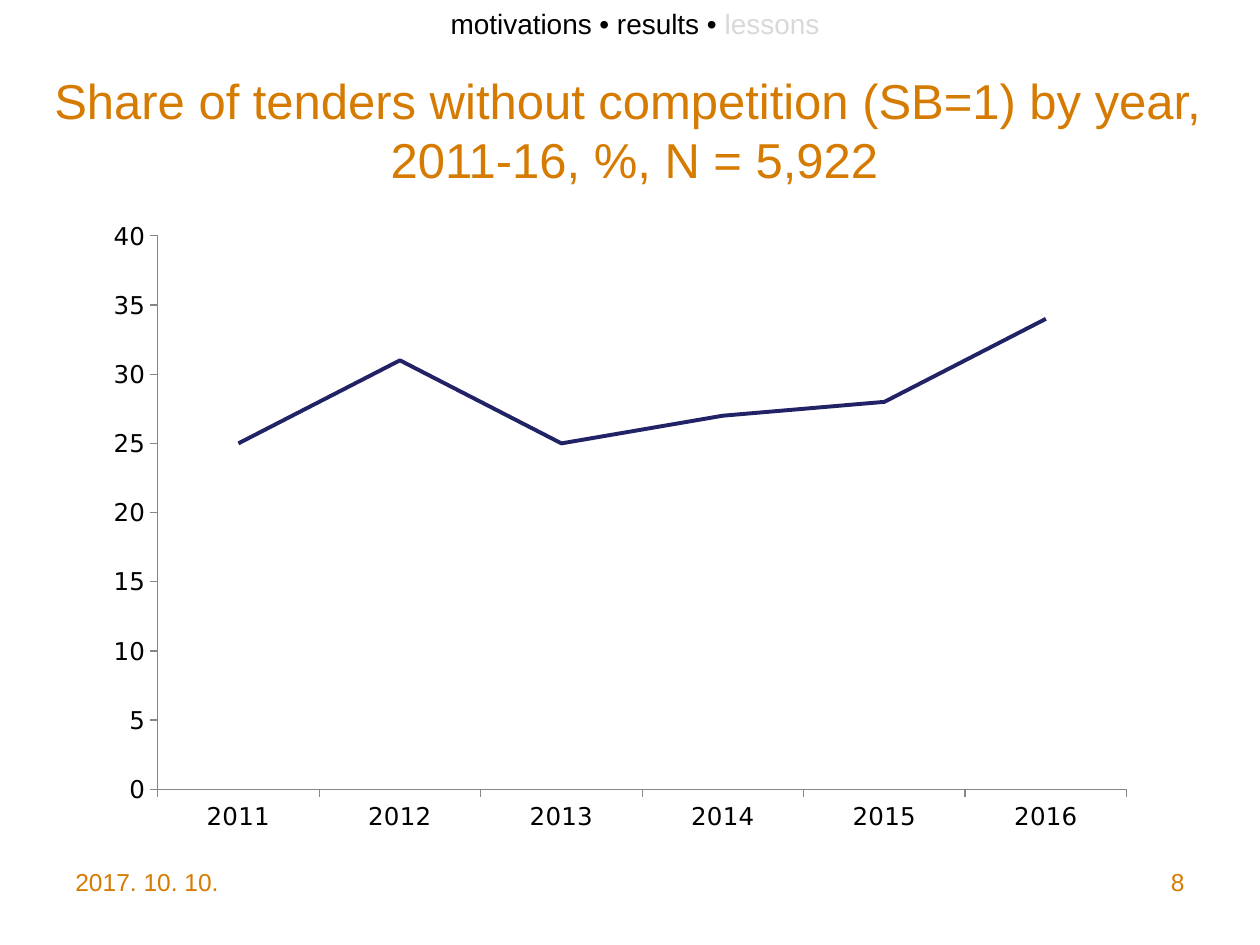
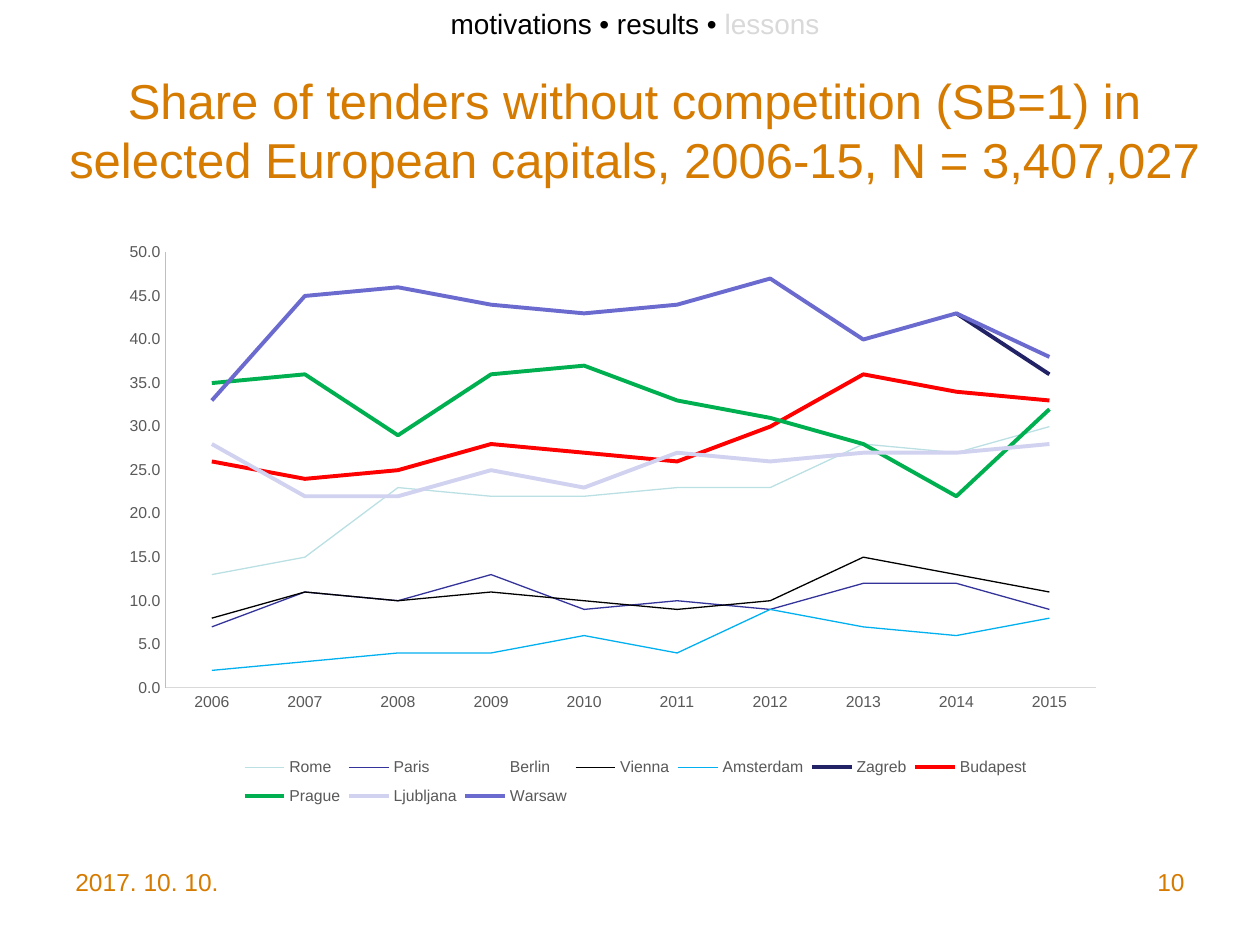
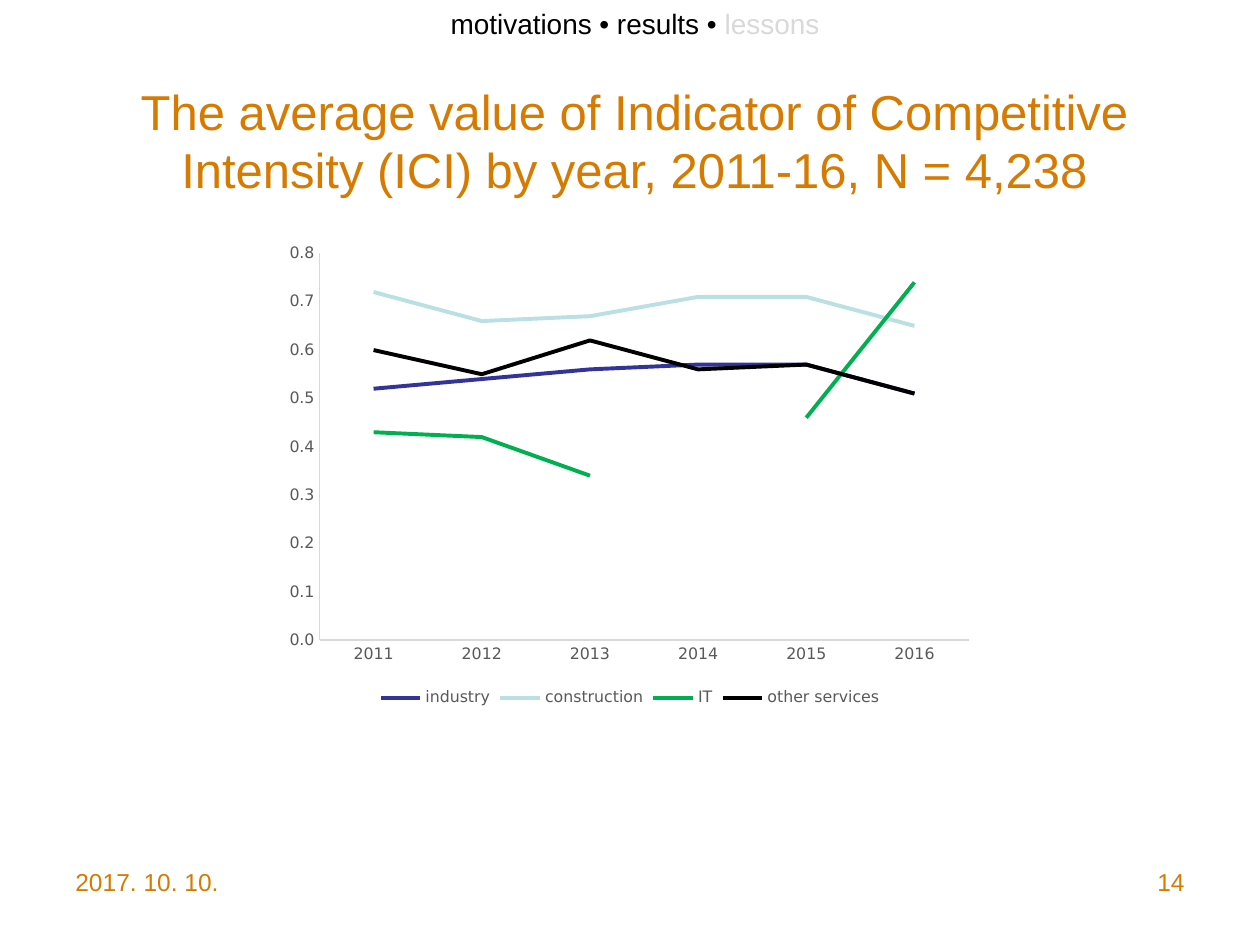
from lxml import etree
from pptx import Presentation
from pptx.chart.data import CategoryChartData
from pptx.dml.color import RGBColor
from pptx.enum.chart import XL_CHART_TYPE, XL_LEGEND_POSITION, XL_TICK_MARK
from pptx.enum.text import MSO_ANCHOR, PP_ALIGN
from pptx.oxml.ns import qn
from pptx.util import Inches, Pt

LEFT, MID, RIGHT = PP_ALIGN.LEFT, PP_ALIGN.CENTER, PP_ALIGN.RIGHT
TOP, CENTER = MSO_ANCHOR.TOP, MSO_ANCHOR.MIDDLE
OUT, NONE = XL_TICK_MARK.OUTSIDE, XL_TICK_MARK.NONE
LINE, BOTTOM = XL_CHART_TYPE.LINE, XL_LEGEND_POSITION.BOTTOM

ORANGE, BLACK, PALE, GRAY = "D67B01", "000000", "D9D9D9", "595959"
NAVY, BLUE, AQUA, GREEN = "222267", "333399", "BBE0E3", "00B050"
SANS, DEJA = "Arial", "DejaVu Sans"
THIN, THICK = 0.75, 2.25
DATE = "2017. 10. 10."
TRAIL = [("motivations • results • ", BLACK), ("lessons", PALE)]

SLIDES = [
    dict(
        title="Share of tenders without competition (SB=1) by year, \v2011-16, %, N = 5,922",
        deep=1.02, page="8",
        chart=dict(
            box=(0.75, 1.67, 8.36, 5.05), plot=(0.06, 0.04, 0.92, 0.87),
            font=DEJA, size=14, color=BLACK, tick=OUT, edges=("868686", "868686"),
            form="###0", top=40, step=5, years=range(2011, 2017),
            rows=[("Series 1", NAVY, THICK, (25, 31, 25, 27, 28, 34))])),
    dict(
        title="Share of tenders without competition (SB=1) in selected European capitals, "
              "2006-15, N = 3,407,027",
        deep=1.02, page="10",
        chart=dict(
            box=(0.83, 1.86, 8.03, 4.8), plot=(0.06, 0.03, 0.92, 0.72),
            font=SANS, size=9, color=GRAY, tick=NONE, edges=(PALE, "BFBFBF"),
            form="0.0", top=50, step=5, legend=True, keys=(0.13, 0.85, 0.79, 0.11),
            years=range(2006, 2016),
            rows=[
                ("Rome", AQUA, THIN, (13, 15, 23, 22, 22, 23, 23, 28, 27, 30)),
                ("Paris", BLUE, THIN, (7, 11, 10, 13, 9, 10, 9, 12, 12, 9)),
                ("Berlin", "FFFFFF", THIN, (None,) * 10),
                ("Vienna", BLACK, THIN, (8, 11, 10, 11, 10, 9, 10, 15, 13, 11)),
                ("Amsterdam", "00B0F0", THIN, (2, 3, 4, 4, 6, 4, 9, 7, 6, 8)),
                ("Zagreb", NAVY, THICK, (None,) * 8 + (43, 36)),
                ("Budapest", "FF0000", THICK, (26, 24, 25, 28, 27, 26, 30, 36, 34, 33)),
                ("Prague", GREEN, THICK, (35, 36, 29, 36, 37, 33, 31, 28, 22, 32)),
                ("Ljubljana", "D1D1F0", THICK, (28, 22, 22, 25, 23, 27, 26, 27, 27, 28)),
                ("Warsaw", "6B6BCF", THICK, (33, 45, 46, 44, 43, 44, 47, 40, 43, 38)),
            ])),
    dict(
        title="The average value of Indicator of Competitive Intensity (ICI) by year, "
              "2011-16, N = 4,238",
        deep=1.18, page="14",
        chart=dict(
            box=(2.2, 1.86, 5.6, 3.79), plot=(0.06, 0.04, 0.92, 0.81),
            font=DEJA, size=9, color=GRAY, tick=NONE, edges=(PALE, PALE),
            form="0.0", top=0.8, step=0.1, legend=True, years=range(2011, 2017),
            rows=[
                ("industry", BLUE, THICK, (0.52, 0.54, 0.56, 0.57, 0.57, 0.51)),
                ("construction", AQUA, THICK, (0.72, 0.66, 0.67, 0.71, 0.71, 0.65)),
                ("IT", GREEN, THICK, (0.43, 0.42, 0.34, None, 0.46, 0.74)),
                ("other services", BLACK, THICK, (0.6, 0.55, 0.62, 0.56, 0.57, 0.51)),
            ])),
]


def rgb(code):
    return RGBColor.from_string(code)


def style(font, face, size, color):
    font.name, font.size = face, Pt(size)
    font.color.rgb = rgb(color)


def write(slide, text, box, size=14, color=ORANGE, align=LEFT, anchor=TOP):
    frame = slide.shapes.add_textbox(*map(Inches, box)).text_frame
    frame.word_wrap = True
    frame.vertical_anchor = anchor
    para = frame.paragraphs[0]
    para.alignment = align
    runs = [(text, color)] if isinstance(text, str) else text
    for words, tint in runs:
        for i, part in enumerate(words.split("\v")):
            if i:
                para.add_line_break()
            run = para.add_run()
            run.text = part
            style(run.font, SANS, size, tint)


def place(area, spots, index=0, marks=()):
    for old in area.findall(qn("c:layout")):
        area.remove(old)
    layout = etree.Element(qn("c:layout"))
    area.insert(index, layout)
    hand = etree.SubElement(layout, qn("c:manualLayout"))
    modes = [("xMode", "edge"), ("yMode", "edge")]
    for tag, val in [*marks, *modes, *zip("xywh", spots)]:
        etree.SubElement(hand, qn("c:" + tag)).set("val", str(val))


def graph(slide, box, plot, font, size, color, tick, edges, form, top, step,
          years, rows, legend=False, keys=None):
    data = CategoryChartData(number_format=form)
    data.categories = [str(year) for year in years]
    for name, tint, width, vals in rows:
        data.add_series(name, vals)
    chart = slide.shapes.add_chart(LINE, *map(Inches, box), data).chart
    style(chart.font, font, size, color)
    chart.has_title = False
    chart.has_legend = legend
    if legend:
        chart.legend.position = BOTTOM
        chart.legend.include_in_layout = False
        style(chart.legend.font, font, size, color)
    if keys:
        place(chart.legend._element, keys, index=1)
    chart.plots[0].vary_by_categories = False
    for line, (name, tint, width, vals) in zip(chart.plots[0].series, rows):
        line.smooth = False
        line.format.line.color.rgb = rgb(tint)
        line.format.line.width = Pt(width)
    for axis, edge in zip((chart.category_axis, chart.value_axis), edges):
        axis.has_major_gridlines = False
        axis.major_tick_mark, axis.minor_tick_mark = tick, NONE
        axis.format.line.color.rgb = rgb(edge)
        axis.format.line.width = Pt(THIN)
        style(axis.tick_labels.font, font, size, color)
    scale = chart.value_axis
    scale.minimum_scale, scale.maximum_scale, scale.major_unit = 0, top, step
    scale.tick_labels.number_format = form
    scale.tick_labels.number_format_is_linked = False
    place(chart.plots[0]._element.getparent(), plot, marks=[("layoutTarget", "inner")])


def main():
    deck = Presentation()
    deck.slide_width, deck.slide_height = Inches(10), Inches(7.5)
    for item in SLIDES:
        slide = deck.slides.add_slide(deck.slide_layouts[6])
        write(slide, item["title"], (0.27, 0.52, 9.53, item["deep"]),
              size=28, align=MID, anchor=CENTER)
        write(slide, DATE, (0.5, 6.83, 2.33, 0.52))
        write(slide, item["page"], (7.17, 6.83, 2.33, 0.52), align=RIGHT)
        graph(slide, **item["chart"])
        write(slide, TRAIL, (0.04, 0, 10, 0.37), size=16, align=MID)
    deck.save("out.pptx")


if __name__ == "__main__":
    main()
